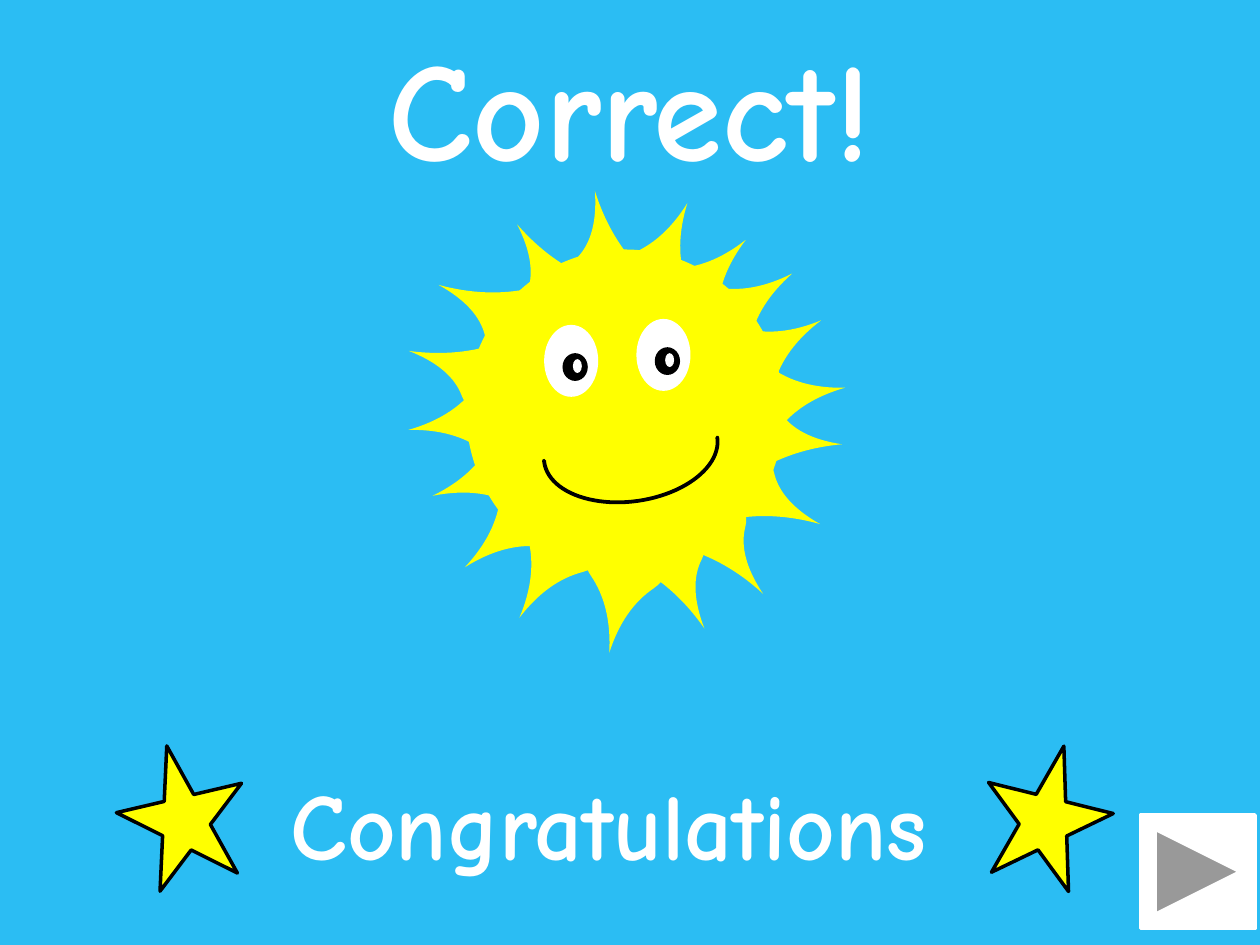
from pptx import Presentation
from pptx.dml.color import RGBColor
from pptx.enum.shapes import MSO_SHAPE
from pptx.enum.text import MSO_ANCHOR, PP_ALIGN
from pptx.util import Cm, Pt

OVAL = MSO_SHAPE.OVAL
TEAR = MSO_SHAPE.TEAR
ARC = MSO_SHAPE.BLOCK_ARC
STAR = MSO_SHAPE.STAR_5_POINT
NEXT_BUTTON = MSO_SHAPE.ACTION_BUTTON_FORWARD_OR_NEXT
MIDDLE = MSO_ANCHOR.MIDDLE
CENTER = PP_ALIGN.CENTER

SKY, YELLOW, WHITE, BLACK = "2BBDF3", "FFFF00", "FFFFFF", "000000"

# Rays as (left, top, rotation), grouped by their (width, height), in cm
RAYS = {
    (1.8, 1.83): [
        (12.09, 5.08, 340), (12.67, 5.41, 0), (13.34, 5.77, 11.4),
        (13.84, 6.58, 15.7), (14.07, 7.21, 37), (11.76, 10.19, 145.9),
        (10.62, 9.73, 165.6), (10.08, 9.19, 185.9), (9.8, 8.41, 206.8),
        (9.4, 7.44, 216.9),
    ],
    (1.5, 2.21): [
        (14.05, 7.8, 57.2), (13.77, 8.64, 78), (13.21, 9.22, 105),
        (12.42, 9.65, 117.6), (9.6, 6.5, 250), (10.11, 5.44, 257.5),
        (10.9, 5.21, 291.5), (11.66, 4.88, 314.8),
    ],
}


def rgb(color):
    return RGBColor.from_string(color)


class Card:
    font = "Comic Neue"
    line_width = 2

    def __init__(self, slide):
        self.slide = slide
        slide.background.fill.solid()
        slide.background.fill.fore_color.rgb = rgb(SKY)

    def shape(self, kind, left, top, width, height, fill, line=None,
              rotation=0, adjustments=(), group=None):
        parent = group or self.slide
        shape = parent.shapes.add_shape(
            kind, Cm(left), Cm(top), Cm(width), Cm(height))
        shape.shadow.inherit = False
        shape.rotation = rotation
        for index, value in enumerate(adjustments):
            shape.adjustments[index] = value
        shape.fill.solid()
        shape.fill.fore_color.rgb = rgb(fill)
        if line:
            shape.line.color.rgb = rgb(line)
            shape.line.width = Pt(self.line_width)
        else:
            shape.line.fill.background()

    def text(self, words, left, top, size):
        box = self.slide.shapes.add_textbox(
            Cm(left), Cm(top), Cm(22.86), Cm(3.18))
        frame = box.text_frame
        frame.word_wrap = True
        frame.vertical_anchor = MIDDLE
        paragraph = frame.paragraphs[0]
        paragraph.text = words
        paragraph.alignment = CENTER
        font = paragraph.font
        font.name, font.size, font.bold = self.font, Pt(size), True
        font.color.rgb = rgb(WHITE)

    def eye(self, left, top, group):
        self.shape(OVAL, left, top, 1.09, 1.45, WHITE, group=group)
        self.shape(OVAL, left + 0.37, top + 0.57, 0.51, 0.56, BLACK, group=group)
        self.shape(OVAL, left + 0.58, top + 0.69, 0.18, 0.28, WHITE, group=group)

    def sun(self):
        sun = self.slide.shapes.add_group_shape()
        self.shape(OVAL, 9.4, 5.03, 6.4, 6.55, YELLOW, group=sun)
        for (width, height), rays in RAYS.items():
            for left, top, rotation in rays:
                self.shape(TEAR, left, top, width, height, YELLOW,
                           rotation=rotation, adjustments=[1.627], group=sun)
        self.shape(ARC, 10.95, 8.03, 3.53, 2.08, BLACK, BLACK, 171.8,
                   [108, 0.661, 0.003], sun)
        self.eye(10.97, 6.55, sun)
        self.eye(12.83, 6.43, sun)


def main():
    deck = Presentation()
    deck.slide_width, deck.slide_height = Cm(25.4), Cm(19.05)
    card = Card(deck.slides.add_slide(deck.slide_layouts[6]))

    card.sun()
    for left, rotation in [(2.39, 346.8), (19.81, 14)]:
        card.shape(STAR, left, 15, 2.59, 2.82, YELLOW, BLACK, rotation)
    card.text("Correct!", 1.27, 0.53, 80)
    card.text("Congratulations", 0.84, 15, 54)
    card.shape(NEXT_BUTTON, 22.99, 16.43, 2.31, 2.29, WHITE, WHITE)

    deck.save("out.pptx")


if __name__ == "__main__":
    main()
